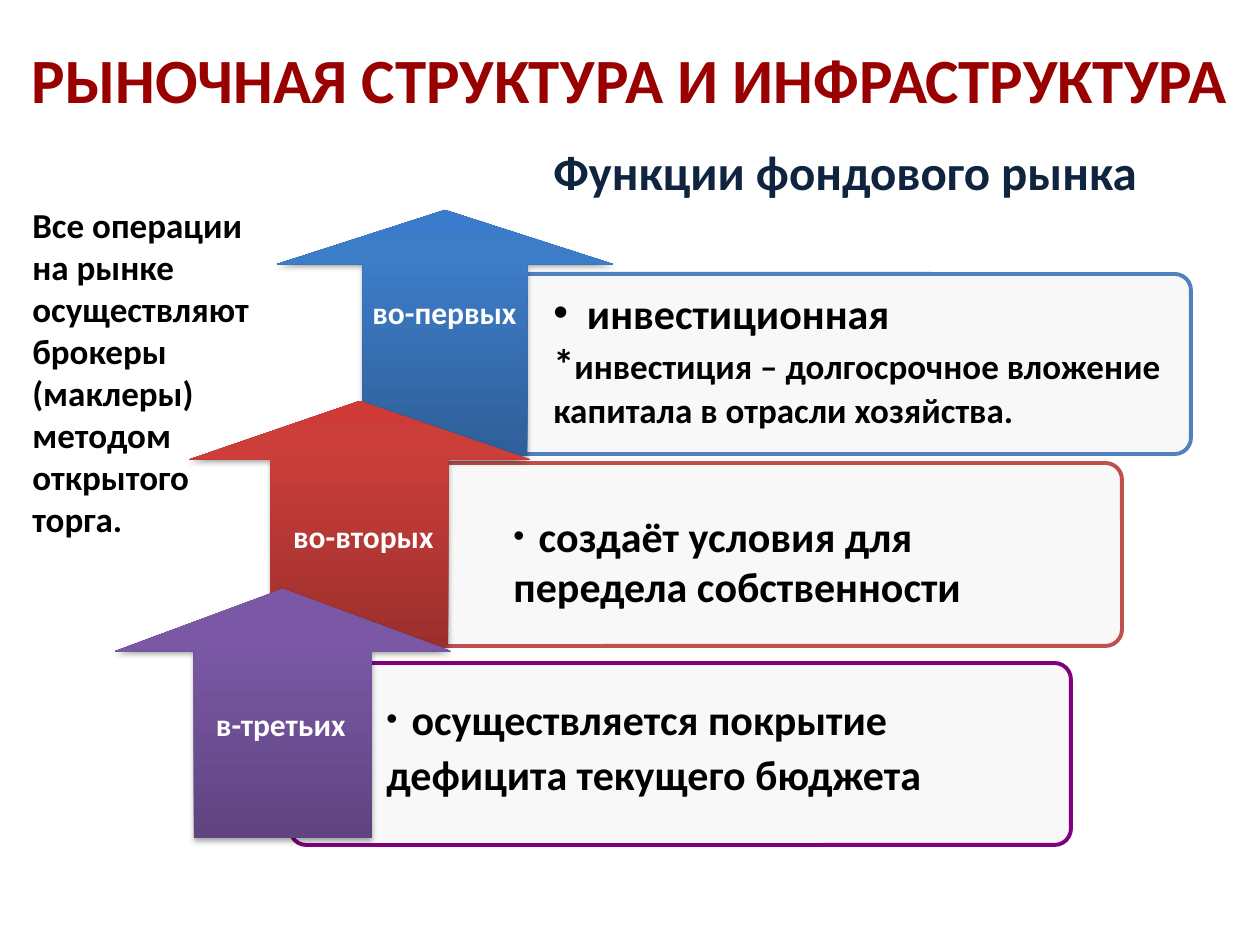
from copy import deepcopy

from pptx import Presentation
from pptx.dml.color import RGBColor
from pptx.enum.shapes import MSO_SHAPE
from pptx.enum.text import MSO_ANCHOR, MSO_AUTO_SIZE, PP_ALIGN
from pptx.oxml import parse_xml
from pptx.oxml.ns import nsdecls, qn
from pptx.util import Emu, Pt

EMU_PER_PX = 914400 / 126
FONT = "Calibri"

BLACK = RGBColor(0x00, 0x00, 0x00)
WHITE = RGBColor(0xFF, 0xFF, 0xFF)
PANEL = RGBColor(0xF8, 0xF8, 0xF8)
TITLE_RED = RGBColor(0x99, 0x00, 0x00)
NAVY = RGBColor(0x0F, 0x24, 0x3E)
BLUE = RGBColor(0x4F, 0x81, 0xBD)
RED = RGBColor(0xC0, 0x50, 0x4D)
PURPLE = RGBColor(0x80, 0x00, 0x80)
# Arrow gradients run from the bottom to the top
BLUE_RAMP = (RGBColor(0x2F, 0x5F, 0x99), RGBColor(0x3D, 0x7C, 0xC7), RGBColor(0x3A, 0x7C, 0xCB))
RED_RAMP = (RGBColor(0x9C, 0x2F, 0x2D), RGBColor(0xCB, 0x3E, 0x3A), RGBColor(0xCE, 0x3B, 0x37))
PURPLE_RAMP = (RGBColor(0x5F, 0x44, 0x80), RGBColor(0x7B, 0x58, 0xA6), RGBColor(0x7C, 0x57, 0xA8))
RAMP_POSITIONS = (0, 0.8, 1)

# Each step: panel, its line, arrow, arrow proportions, ramp, label and its place
STEPS = [
    ((382, 274, 809, 180), BLUE, (277, 210, 336, 246), (0.49, 0.22), BLUE_RAMP,
     "во-первых", (354, 287, 175, 50)),
    ((383, 463, 739, 183), RED, (189, 401, 341, 244), (0.52, 0.24), RED_RAMP,
     "во-вторых", (276, 511, 170, 50)),
    ((290, 663, 781, 182), PURPLE, (115, 589, 336, 249), (0.53, 0.25), PURPLE_RAMP,
     "в-третьих", (190, 699, 168, 50)),
]


def px(value):
    return Emu(round(value * EMU_PER_PX))


def add_preset(page, kind, place, adjustments):
    shape = page.shapes.add_shape(kind, *map(px, place))
    shape.shadow.inherit = False
    for index, value in enumerate(adjustments):
        shape.adjustments[index] = value
    return shape


def add_panel(page, place, line_color):
    panel = add_preset(page, MSO_SHAPE.ROUNDED_RECTANGLE, place, [0.09])
    panel.fill.solid()
    panel.fill.fore_color.rgb = PANEL
    panel.line.color.rgb = line_color
    panel.line.width = Pt(2.25)


def add_arrow(page, place, adjustments, ramp):
    arrow = add_preset(page, MSO_SHAPE.UP_ARROW, place, adjustments)
    arrow.line.fill.background()
    arrow.fill.gradient()
    arrow.fill.gradient_angle = 90
    properties = arrow._element.spPr
    stop_list = properties.find(".//" + qn("a:gsLst"))
    stop_list.append(deepcopy(stop_list[-1]))
    for stop, position, color in zip(arrow.fill.gradient_stops, RAMP_POSITIONS, ramp):
        stop.position = position
        stop.color.rgb = color
    # Soft shadow below the arrow
    properties.find(qn("a:effectLst")).append(parse_xml(
        f'<a:outerShdw {nsdecls("a")} blurRad="40000" dist="23000" dir="5400000" rotWithShape="0">'
        '<a:srgbClr val="000000"><a:alpha val="35000"/></a:srgbClr></a:outerShdw>'))


def add_span(para, text, size, color):
    span = para.add_run()
    span.text = text
    span.font.name = FONT
    span.font.size = Pt(size)
    span.font.bold = True
    span.font.color.rgb = color
    return span


def add_bullet(para, size, color):
    """Put a bullet before the paragraph, followed by one widened space."""
    properties = para._p.get_or_add_pPr()
    properties.set("marL", "0")
    properties.set("indent", "0")
    properties.append(parse_xml(f'<a:buFont {nsdecls("a")} typeface="Arial"/>'))
    properties.append(parse_xml(f'<a:buChar {nsdecls("a")} char="•"/>'))
    gap = add_span(para, " ", size, color)
    gap.font._element.set("spc", str(round(size * 22.5)))


def add_text(page, place, paragraphs, color=BLACK, align=PP_ALIGN.LEFT,
             bullet=None, line_spacing=None, middle=False):
    """Each paragraph is a list of (text, size); bullet is the size of the first one's bullet."""
    box = page.shapes.add_textbox(*map(px, place))
    frame = box.text_frame
    frame.word_wrap = True
    frame.auto_size = MSO_AUTO_SIZE.NONE if middle else MSO_AUTO_SIZE.SHAPE_TO_FIT_TEXT
    frame.vertical_anchor = MSO_ANCHOR.MIDDLE if middle else MSO_ANCHOR.TOP
    for index, spans in enumerate(paragraphs):
        para = frame.add_paragraph() if index else frame.paragraphs[0]
        para.alignment = align
        if line_spacing:
            para.line_spacing = line_spacing
        if bullet and index == 0:
            add_bullet(para, bullet, color)
        for text, size in spans:
            add_span(para, text, size, color)


def main():
    deck = Presentation()
    deck.slide_width, deck.slide_height = px(1260), px(945)
    page = deck.slides.add_slide(deck.slide_layouts[6])

    # Stepped panels, arrows and labels
    for panel, line_color, arrow, adjustments, ramp, label, label_place in STEPS:
        add_panel(page, panel, line_color)
        add_arrow(page, arrow, adjustments, ramp)
        add_text(page, label_place, [[(label, 18)]], color=WHITE, align=PP_ALIGN.RIGHT)

    # Functions of the market
    add_text(page, (541, 281, 640, 158), [
        [("инвестиционная", 24)],
        [("*", 24), ("инвестиция – долгосрочное вложение капитала в отрасли хозяйства.", 20)],
    ], bullet=24)
    add_text(page, (501, 504, 601, 115),
             [[("создаёт условия для передела собственности", 24)]], bullet=18)
    add_text(page, (374, 682, 679, 122),
             [[("осуществляется покрытие дефицита текущего бюджета", 24)]],
             bullet=18, line_spacing=1.1)

    # Headings and side note
    add_text(page, (541, 135, 680, 72), [[("Функции фондового рынка", 28)]], color=NAVY)
    add_text(page, (20, 197, 266, 352), [[(
        "Все операции на рынке осуществляют брокеры (маклеры) методом открытого торга.", 20)]])
    add_text(page, (0, 20, 1260, 116), [[("РЫНОЧНАЯ СТРУКТУРА И ИНФРАСТРУКТУРА", 36)]],
             color=TITLE_RED, align=PP_ALIGN.CENTER, middle=True)

    deck.save("out.pptx")


if __name__ == "__main__":
    main()
